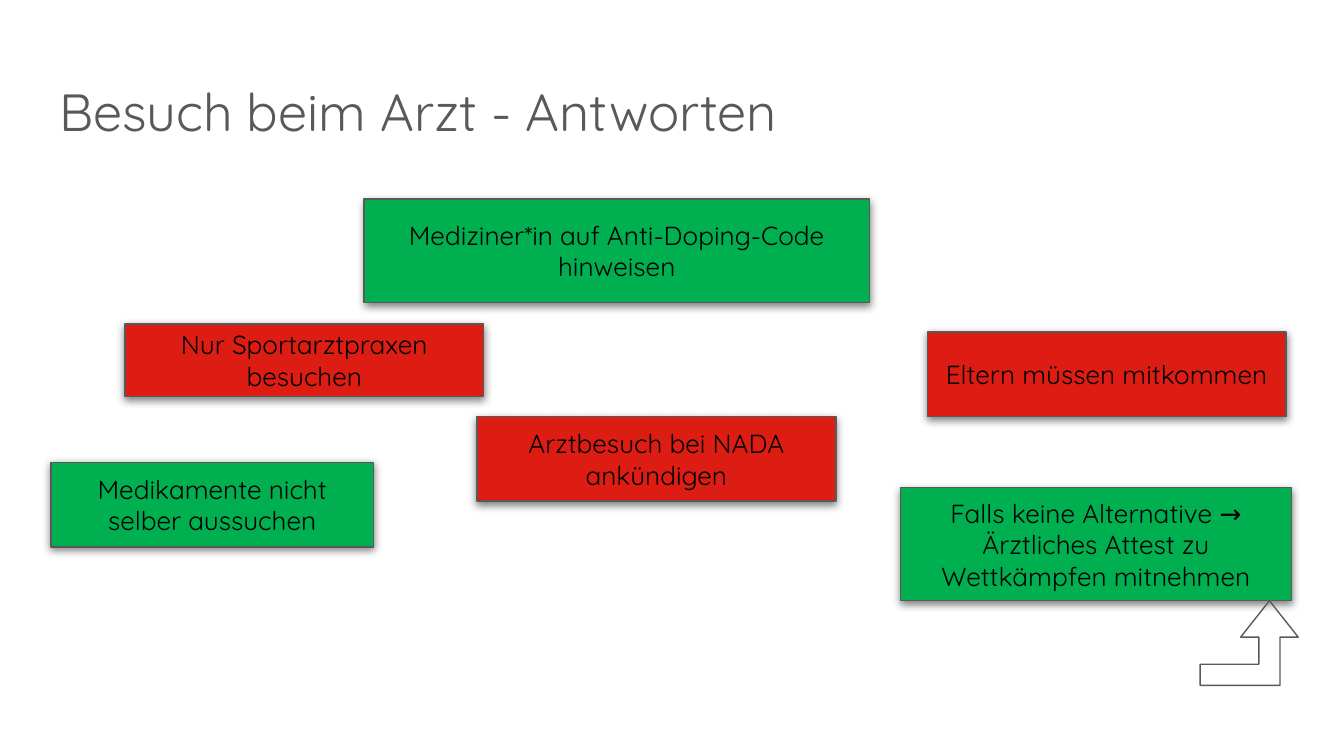
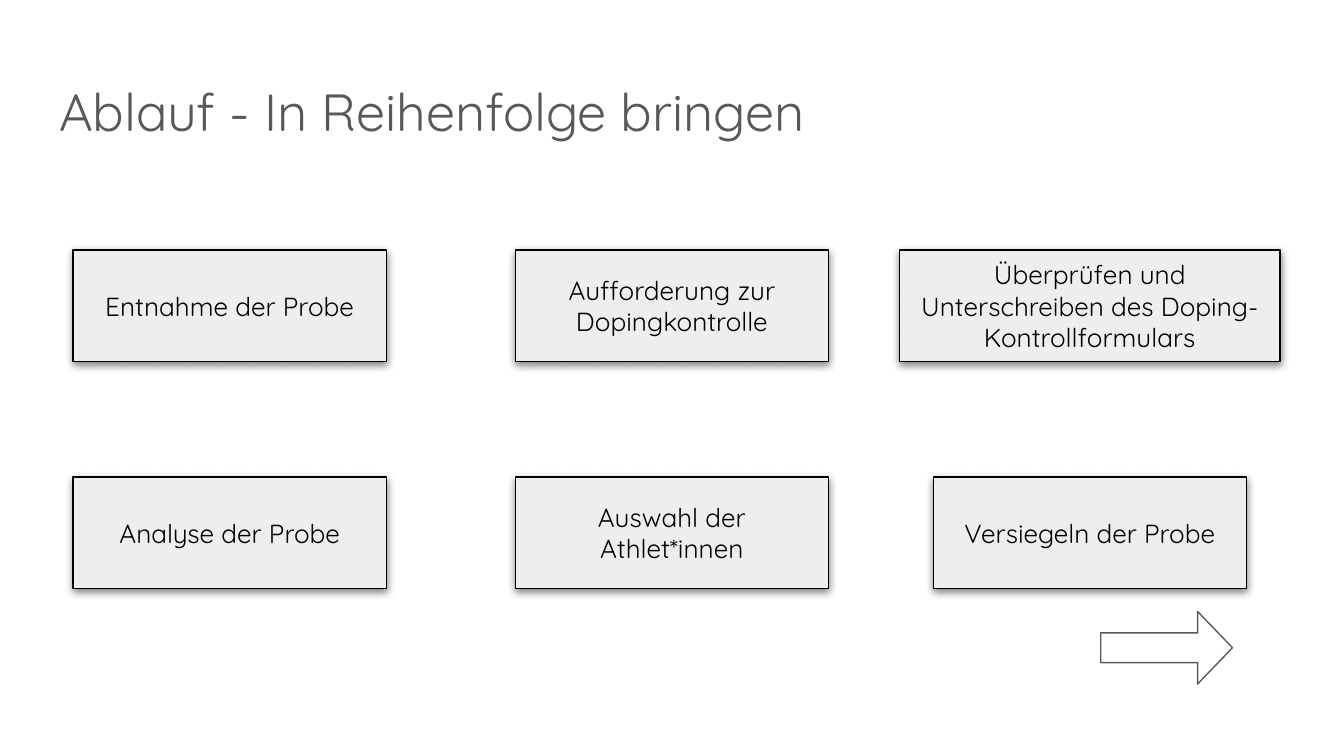
from collections import namedtuple

from lxml.etree import SubElement
from pptx import Presentation
from pptx.dml.color import RGBColor
from pptx.enum.shapes import MSO_SHAPE as Preset
from pptx.enum.text import MSO_ANCHOR as Anchor, PP_ALIGN as Align
from pptx.oxml.ns import qn
from pptx.util import Inches, Pt

Box = namedtuple("Box", "left top width height")

COLORS = {
    "title": "595959",
    "outline": "595959",
    "right": "00B050",
    "wrong": "DD1D14",
    "step": "EEEEEE",
    "ink": "000000",
}
FONT = "Quicksand"
TITLE_BOX = Box(0.34, 0.49, 8.3, 0.63)

ANSWERS_BOX = Box(0.38, 1.48, 9.28, 3.62)
ANSWERS = [
    ("Medikamente nicht selber aussuchen", "right", Box(0, 1.96, 2.4, 0.63)),
    ("Mediziner*in auf Anti-Doping-Code hinweisen", "right", Box(2.33, 0, 3.76, 0.77)),
    ("Falls keine Alternative → Ärztliches Attest zu Wettkämpfen mitnehmen", "right",
     Box(6.32, 2.15, 2.91, 0.84)),
    ("Arztbesuch bei NADA ankündigen", "wrong", Box(3.17, 1.62, 2.67, 0.63)),
    ("Eltern müssen mitkommen", "wrong", Box(6.52, 0.99, 2.67, 0.63)),
    ("Nur Sportarztpraxen besuchen", "wrong", Box(0.55, 0.93, 2.67, 0.54)),
]

STEPS_BOX = Box(0.54, 1.86, 8.99, 3.23)
STEP_WIDTH, WIDE_STEP_WIDTH, STEP_HEIGHT = 2.33, 2.83, 0.83
ROW_PITCH = 1.69
COLUMN_CENTERS = [1.17, 4.46, 7.57]
WIDE_STEP = "Überprüfen und Unterschreiben des Doping-Kontrollformulars"
STEP_ROWS = [
    ["Entnahme der Probe", "Aufforderung zur Dopingkontrolle", WIDE_STEP],
    ["Analyse der Probe", "Auswahl der Athlet*innen", "Versiegeln der Probe"],
]


def rgb(name):
    """Return the named colour."""
    return RGBColor.from_string(COLORS[name])


def inside(region, part):
    """Return a part's box moved from its region to the slide."""
    return part._replace(left=region.left + part.left, top=region.top + part.top)


def write(shape, text, size, color, align, anchor, margin=0.1):
    """Fill a shape with one formatted paragraph."""
    frame = shape.text_frame
    frame.text = text
    frame.word_wrap = True
    frame.vertical_anchor = anchor
    frame.margin_left = frame.margin_right = Inches(0.1)
    frame.margin_top = frame.margin_bottom = Inches(margin)
    paragraph = frame.paragraphs[0]
    paragraph.alignment = align
    font = paragraph.runs[0].font
    font.name, font.size, font.color.rgb = FONT, Pt(size), rgb(color)


def add_outlined(slide, preset, box, line="outline"):
    """Add an unfilled preset shape with a thin outline and no shadow."""
    shape = slide.shapes.add_shape(preset, *map(Inches, box))
    shape.fill.background()
    shape.line.color.rgb = rgb(line)
    shape.line.width = Pt(0.75)
    shape.shadow.inherit = False
    return shape


def add_shadow(shape):
    """Give a shape a soft shadow falling downwards."""
    effects = shape.element.spPr.find(qn("a:effectLst"))
    shadow = SubElement(effects, qn("a:outerShdw"), blurRad=str(Pt(4.5)),
                        dist=str(Pt(1.5)), dir="5400000", algn="bl", rotWithShape="0")
    color = SubElement(shadow, qn("a:srgbClr"), val=COLORS["ink"])
    SubElement(color, qn("a:alpha"), val="50000")


def add_card(slide, box, text, fill, line, margin):
    """Add a filled card with centred text."""
    card = add_outlined(slide, Preset.RECTANGLE, box, line)
    card.fill.solid()
    card.fill.fore_color.rgb = rgb(fill)
    add_shadow(card)
    write(card, text, 14, "ink", Align.CENTER, Anchor.MIDDLE, margin)


def add_arrow(slide, preset, box, adjustments):
    """Add an outlined block arrow."""
    arrow = add_outlined(slide, preset, box)
    for index, value in enumerate(adjustments):
        arrow.adjustments[index] = value


def add_titled_slide(deck, text):
    """Add a title-only slide and format its title."""
    slide = deck.slides.add_slide(deck.slide_layouts[5])
    title = slide.shapes.title
    title.left, title.top, title.width, title.height = map(Inches, TITLE_BOX)
    write(title, text, 28, "title", Align.LEFT, Anchor.TOP)
    return slide


def add_answers(slide, region):
    """Place the right and wrong answers and the bent arrow."""
    for text, verdict, part in ANSWERS:
        add_card(slide, inside(region, part), text, verdict, "outline", 0.1)
    arrow_box = inside(region, Box(8.55, 2.99, 0.73, 0.63))
    add_arrow(slide, Preset.BENT_UP_ARROW, arrow_box, [0.25, 0.34, 0.43])


def add_steps(slide, region):
    """Place the steps in a grid of centred columns and the arrow."""
    for row, steps in enumerate(STEP_ROWS):
        for center, text in zip(COLUMN_CENTERS, steps):
            width = WIDE_STEP_WIDTH if text == WIDE_STEP else STEP_WIDTH
            part = Box(center - width / 2, row * ROW_PITCH, width, STEP_HEIGHT)
            add_card(slide, inside(region, part), text, "step", "ink", 0.05)
    arrow_box = inside(region, Box(7.65, 2.69, 0.98, 0.54))
    add_arrow(slide, Preset.RIGHT_ARROW, arrow_box, [0.41, 0.48])


def main():
    """Build and save the deck."""
    deck = Presentation()
    deck.slide_width = Inches(10)
    deck.slide_height = Inches(10) * 9 // 16
    add_answers(add_titled_slide(deck, "Besuch beim Arzt - Antworten"), ANSWERS_BOX)
    add_steps(add_titled_slide(deck, "Ablauf - In Reihenfolge bringen"), STEPS_BOX)
    deck.save("out.pptx")


if __name__ == "__main__":
    main()
